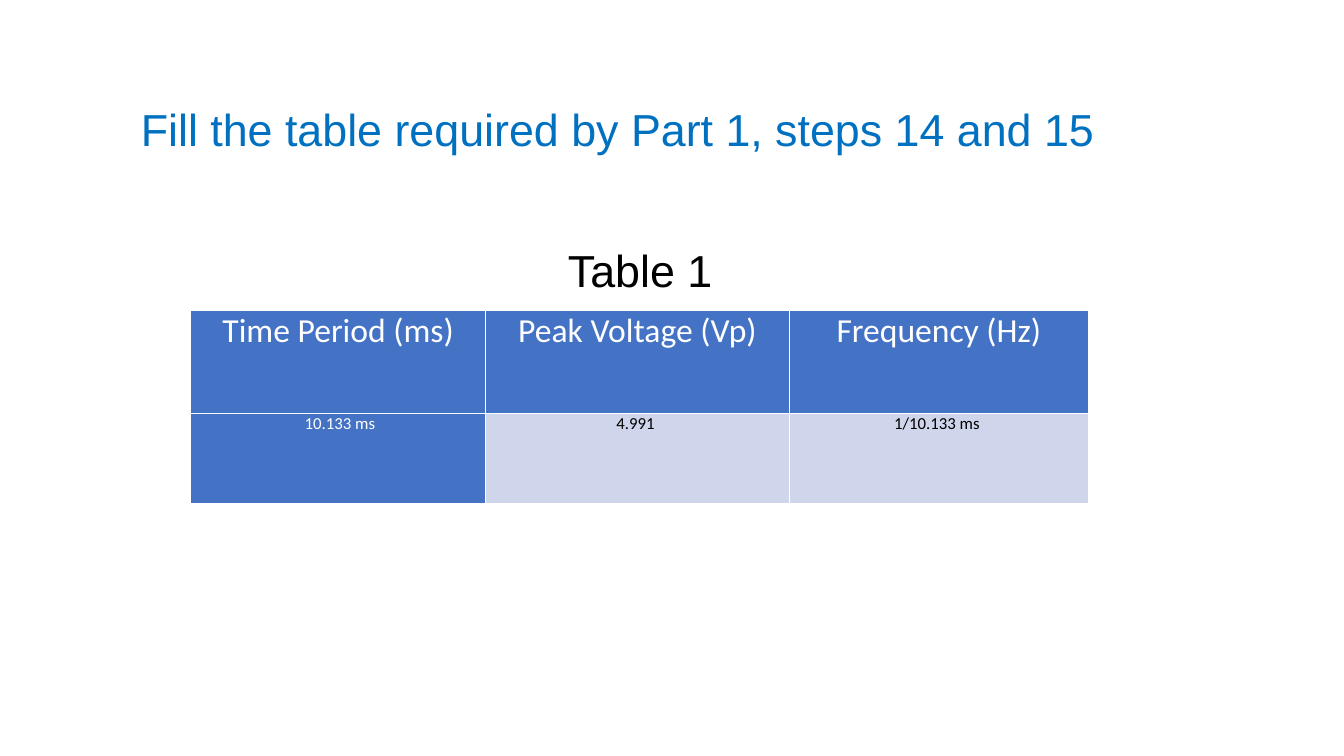
from dataclasses import dataclass

from lxml import etree
from pptx import Presentation
from pptx.dml.color import RGBColor
from pptx.enum.text import MSO_ANCHOR, PP_ALIGN
from pptx.oxml.ns import qn
from pptx.util import Cm, Pt

LEFT, CENTER = PP_ALIGN.LEFT, PP_ALIGN.CENTER
MIDDLE, TOP = MSO_ANCHOR.MIDDLE, MSO_ANCHOR.TOP


@dataclass(frozen=True)
class Theme:
    sans: str = "Arial"
    body: str = "Calibri"
    blue: str = "0070C0"
    black: str = "000000"
    white: str = "FFFFFF"
    head: str = "4472C4"
    band: str = "CFD5EA"
    big: int = 32
    mid: int = 24
    small: int = 12
    line: int = 1


THEME = Theme()
ROWS = [
    ["Time Period (ms)", "Peak Voltage (Vp)", "Frequency (Hz)"],
    [" 10.133 ms", "4.991 ", "1/10.133 ms "],
]
WIDTHS = [7.44, 7.65, 7.54]
HEIGHTS = [2.59, 2.29]


def write(frame, text, font, size, color, align):
    """Fill a text frame with one formatted paragraph."""
    frame.text = text
    para = frame.paragraphs[0]
    para.alignment = align
    style = para.runs[0].font
    style.name, style.size, style.bold = font, Pt(size), False
    style.color.rgb = RGBColor.from_string(color)
    return para


def label(slide, box, text, color, align):
    """Place one large line of text, centred vertically in its box."""
    frame = slide.shapes.add_textbox(*map(Cm, box)).text_frame
    frame.word_wrap = True
    frame.vertical_anchor = MIDDLE
    return write(frame, text, THEME.sans, THEME.big, color, align)


def border(cell):
    """Draw the same thin line on all four sides of a cell."""
    props = cell._tc.get_or_add_tcPr()
    for place, side in enumerate(("lnL", "lnR", "lnT", "lnB")):
        line = etree.Element(qn(f"a:{side}"), w=str(Pt(THEME.line)))
        fill = etree.SubElement(line, qn("a:solidFill"))
        etree.SubElement(fill, qn("a:srgbClr"), val=THEME.white)
        props.insert(place, line)


def grid(slide, left, top):
    """Build the table of readings from its top left corner."""
    size = map(Cm, (left, top, sum(WIDTHS), sum(HEIGHTS)))
    table = slide.shapes.add_table(len(ROWS), len(WIDTHS), *size).table
    table.first_col = True
    for col, width in zip(table.columns, WIDTHS):
        col.width = Cm(width)
    for row, height in zip(table.rows, HEIGHTS):
        row.height = Cm(height)

    # The first row and the first column share the dark fill
    for i, row in enumerate(ROWS):
        for j, text in enumerate(row):
            cell = table.cell(i, j)
            dark = i == 0 or j == 0
            cell.margin_left = cell.margin_right = Cm(0.18)
            cell.margin_top = cell.margin_bottom = 0
            cell.vertical_anchor = TOP
            cell.fill.solid()
            cell.fill.fore_color.rgb = RGBColor.from_string(
                THEME.head if dark else THEME.band)
            write(cell.text_frame, text, THEME.body,
                  THEME.small if i else THEME.mid,
                  THEME.white if dark else THEME.black, CENTER)
            border(cell)


def main():
    deck = Presentation()
    deck.slide_width, deck.slide_height = Cm(33.87), Cm(19.05)
    slide = deck.slides.add_slide(deck.slide_layouts[6])

    # Heading
    title = label(slide, (3.3, 1.96, 28.24, 2.74),
                  "Fill the table required by Part 1, steps 14 and 15",
                  THEME.blue, LEFT)
    title.line_spacing = 0.9

    # Caption and table
    label(slide, (13.34, 5.97, 5.59, 1.63), "Table 1", THEME.black, CENTER)
    grid(slide, 4.8, 7.82)

    deck.save("out.pptx")


if __name__ == "__main__":
    main()
